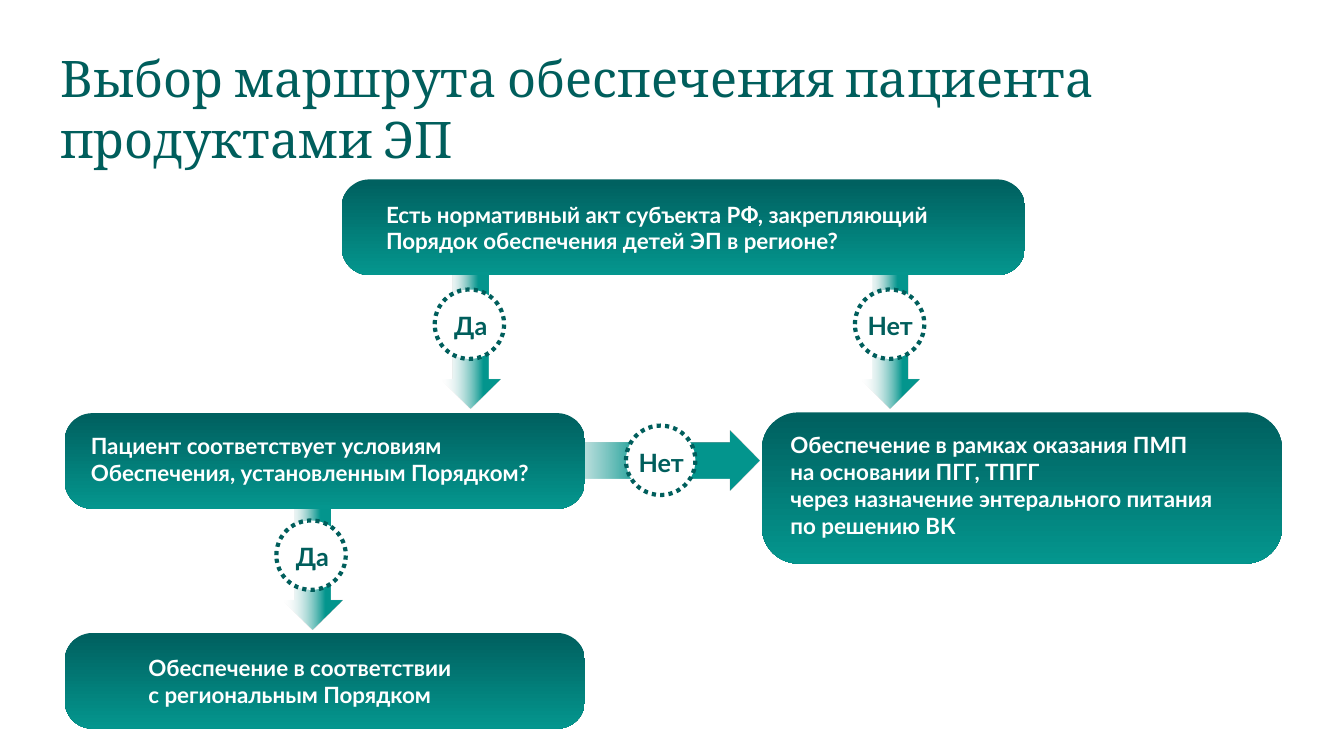
import pptx
import pptx.dml.color
import pptx.enum.dml
import pptx.enum.shapes
import pptx.enum.text
import pptx.oxml.ns
import pptx.util
from lxml import etree

Cm = pptx.util.Cm
Pt = pptx.util.Pt
SHAPES = pptx.enum.shapes.MSO_SHAPE
ALIGN = pptx.enum.text.PP_ALIGN
ANCHOR = pptx.enum.text.MSO_ANCHOR

DARK, DEEP, TEAL, PALE, WHITE = "005E5C", "006160", "04968E", "F2F2F2", "FFFFFF"
ARROW_WIDTH = 1.5
CIRCLE_SIZE = 1.75


def colour(value):
    return pptx.dml.color.RGBColor.from_string(value)


def write_text(frame, paragraphs, size=16, font="Lato", color=WHITE, bold=True,
               align=ALIGN.LEFT, anchor=ANCHOR.MIDDLE, margins=(0.79, 0, 0.25, 0.13),
               line_spacing=None, space_after=0):
    """Fill a text frame; a vertical tab inside a paragraph is a line break."""
    frame.word_wrap = True
    frame.auto_size = pptx.enum.text.MSO_AUTO_SIZE.NONE
    frame.vertical_anchor = anchor
    (frame.margin_left, frame.margin_top,
     frame.margin_right, frame.margin_bottom) = map(Cm, margins)
    for index, text in enumerate(paragraphs):
        paragraph = frame.add_paragraph() if index else frame.paragraphs[0]
        paragraph.text = text
        paragraph.alignment = align
        paragraph.space_after = Pt(space_after)
        if line_spacing:
            paragraph.line_spacing = Pt(line_spacing)
        for run in paragraph.runs:
            run.font.name = font
            run.font.size = Pt(size)
            run.font.bold = bold
            run.font.color.rgb = colour(color)


def add_text(slide, area, paragraphs, **text_format):
    box = slide.shapes.add_textbox(*map(Cm, area))
    write_text(box.text_frame, paragraphs, **text_format)


def add_plain_shape(shapes, kind, area):
    shape = shapes.add_shape(kind, *map(Cm, area))
    shape.shadow.inherit = False
    shape.line.fill.background()
    return shape


def fill_gradient(shape, stops, angle, clear_start=False, turns_with_shape=True):
    shape.fill.gradient()
    shape.fill.gradient_angle = angle
    for stop, (position, value) in zip(shape.fill.gradient_stops, stops):
        stop.position = position
        stop.color.rgb = colour(value)
    gradient = shape._element.spPr.find(pptx.oxml.ns.qn("a:gradFill"))
    gradient.set("rotWithShape", "1" if turns_with_shape else "0")
    if clear_start:
        first_colour = next(gradient.iter(pptx.oxml.ns.qn("a:srgbClr")))
        etree.SubElement(first_colour, pptx.oxml.ns.qn("a:alpha")).set("val", "0")


def add_arrow(slide, tail_x, tail_y, length, down=True):
    """Block arrow with a second bar over the first 70 % of its shaft."""
    group = slide.shapes.add_group_shape()
    parts = ((SHAPES.RIGHT_ARROW, length, ARROW_WIDTH),
             (SHAPES.RECTANGLE, 0.7 * length, 0.6 * ARROW_WIDTH))
    for kind, width, height in parts:
        centre_x = tail_x if down else tail_x + width / 2
        centre_y = tail_y + width / 2 if down else tail_y
        part = add_plain_shape(group.shapes, kind, (
            centre_x - width / 2, centre_y - height / 2, width, height))
        part.rotation = 90 if down else 0
        if kind == SHAPES.RIGHT_ARROW:
            part.adjustments[0] = 0.6
        fill_gradient(part, ((0.03, PALE), (0.71, TEAL)), 0,
                      clear_start=True, turns_with_shape=False)


def add_step(slide, area, rounding=0.289):
    box = add_plain_shape(slide.shapes, SHAPES.ROUNDED_RECTANGLE, area)
    box.adjustments[0] = rounding
    box.rotation = 180
    fill_gradient(box, ((0.03, DEEP), (1, TEAL)), 90)


def add_answer(slide, centre_x, centre_y, answer):
    radius = CIRCLE_SIZE / 2
    circle = add_plain_shape(slide.shapes, SHAPES.OVAL, (
        centre_x - radius, centre_y - radius, CIRCLE_SIZE, CIRCLE_SIZE))
    circle.fill.solid()
    circle.fill.fore_color.rgb = colour(WHITE)
    circle.line.color.rgb = colour(DARK)
    circle.line.width = Pt(3)
    circle.line.dash_style = pptx.enum.dml.MSO_LINE.ROUND_DOT
    offset, width = (0.55, 1.5) if answer == "Да" else (0.66, 1.68)
    add_text(slide, (centre_x - offset, centre_y - 0.42, width, 0.97), [answer],
             size=18, color=DARK, align=ALIGN.CENTER, anchor=ANCHOR.TOP,
             margins=(0, 0, 0.33, 0.18), line_spacing=23.9)


def add_title(slide, text):
    title = slide.shapes.title
    title.left, title.top, title.width, title.height = map(Cm, (1.52, 1.19, 33.07, 3.2))
    write_text(title.text_frame, [text], size=36, font="Cambria", color=DARK, bold=False,
               anchor=ANCHOR.TOP, margins=(0, 0, 0.25, 0.13), space_after=17.6)


def main():
    presentation = pptx.Presentation()
    presentation.slide_width, presentation.slide_height = Cm(33.87), Cm(19.05)
    slide = presentation.slides.add_slide(presentation.slide_layouts[5])
    add_title(slide, "Выбор маршрута обеспечения пациента\vпродуктами ЭП")

    add_arrow(slide, 11.86, 5.52, 4.78)
    add_arrow(slide, 22.43, 5.52, 4.78)
    add_arrow(slide, 7.87, 11.49, 4.37)
    add_arrow(slide, 13.36, 11.6, 5.77, down=False)

    add_step(slide, (8.61, 4.52, 17.22, 2.41))
    add_step(slide, (1.63, 10.41, 13.11, 2.41))
    add_step(slide, (19.2, 10.39, 13.11, 3.81), rounding=0.241)
    add_step(slide, (1.63, 15.95, 13.11, 2.41))

    add_text(slide, (8.94, 4.9, 17.22, 1.8), [
        "Есть нормативный акт субъекта РФ, закрепляющий\v"
        "Порядок обеспечения детей ЭП в регионе?"])
    add_text(slide, (1.5, 10.59, 14.25, 2.08), [
        "Пациент соответствует условиям",
        "Обеспечения, установленным Порядком?"])
    add_text(slide, (19.13, 10.95, 14.25, 2.69), [
        "Обеспечение в рамках оказания ПМП",
        "на основании ПГГ, ТПГГ",
        "через назначение энтерального питания\vпо решению ВК"])
    add_text(slide, (2.95, 16.1, 12.5, 2.24), [
        "Обеспечение в соответствии\vс региональным Порядком"])

    add_answer(slide, 11.83, 8.17, "Да")
    add_answer(slide, 22.42, 8.17, "Нет")
    add_answer(slide, 16.65, 11.6, "Нет")
    add_answer(slide, 7.84, 13.99, "Да")

    presentation.save("out.pptx")


if __name__ == "__main__":
    main()
